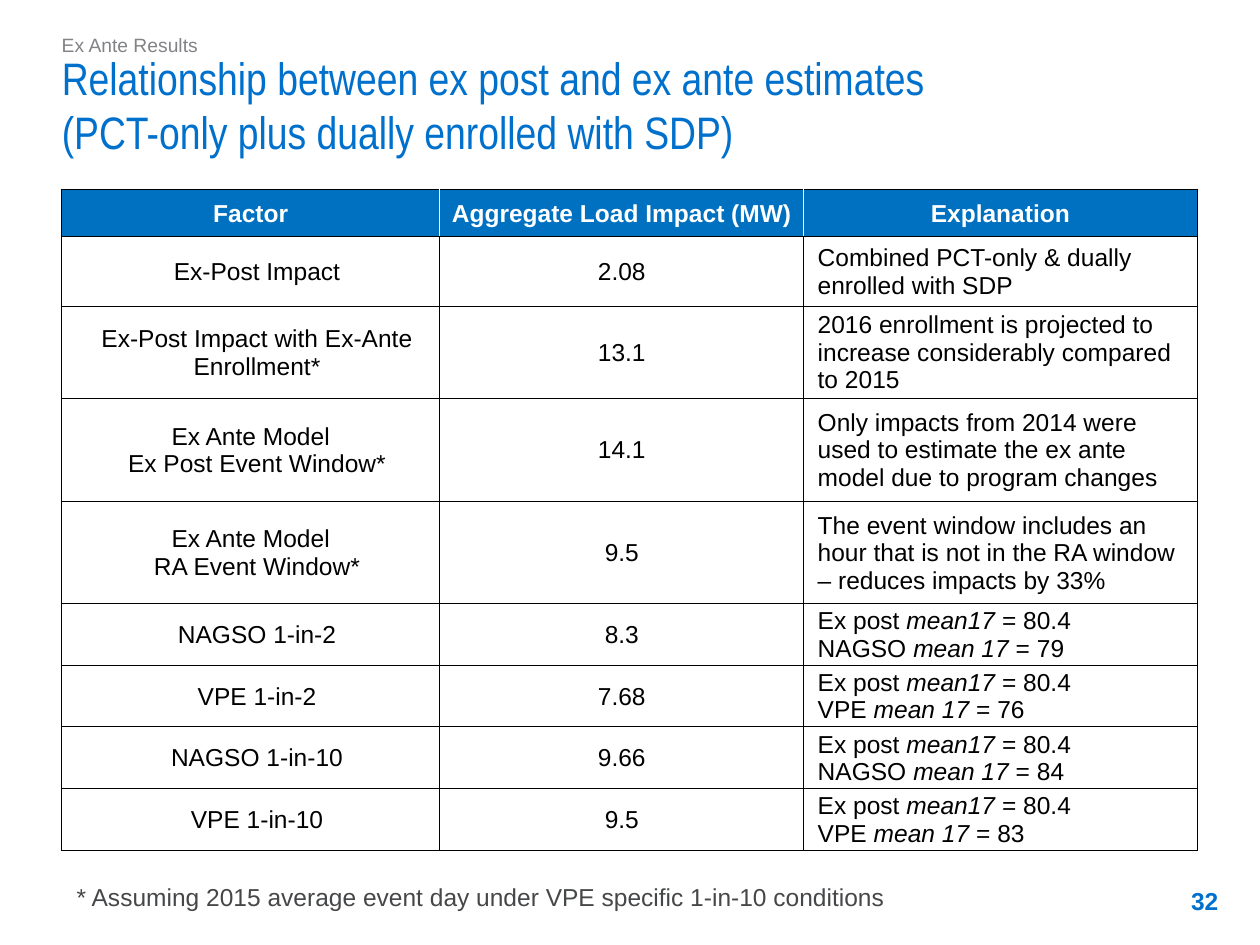
from lxml import etree
from pptx import Presentation
from pptx.dml.color import RGBColor
from pptx.enum.text import MSO_ANCHOR, PP_ALIGN
from pptx.oxml.ns import qn
from pptx.util import Inches, Pt

LEFT, MID, RIGHT = PP_ALIGN.LEFT, PP_ALIGN.CENTER, PP_ALIGN.RIGHT
TOP, CENTER, BASE = MSO_ANCHOR.TOP, MSO_ANCHOR.MIDDLE, MSO_ANCHOR.BOTTOM
WIDE, HIGH = 10, 7.5
EDGE = 0.49
INKS = {"title": "0070CD", "head": "0070C0", "note": "464749",
        "label": "818386", "text": "000000", "white": "FFFFFF"}
COLS = [3, 2.89, 3.12]
ROWS = [0.38, 0.55, 0.73, 0.82, 0.81] + [0.49] * 4
HEADS = ["Factor", "Aggregate Load Impact (MW)", "Explanation"]
STEPS = [
    ("Ex-Post Impact", "2.08", "Combined PCT-only & dually enrolled with SDP"),
    ("Ex-Post Impact with Ex-Ante Enrollment*", "13.1",
     "2016 enrollment is projected to increase considerably compared to 2015"),
    ("Ex Ante Model\nEx Post Event Window*", "14.1",
     "Only impacts from 2014 were used to estimate the ex ante model "
     "due to program changes"),
    ("Ex Ante Model\nRA Event Window*", "9.5",
     "The event window includes an hour that is not in the RA window – "
     "reduces impacts by 33%"),
]
CASES = [("NAGSO", 2, "8.3", 79), ("VPE", 2, "7.68", 76),
         ("NAGSO", 10, "9.66", 84), ("VPE", 10, "9.5", 83)]


def style(run, size, ink, bold=False, face="Arial"):
    font = run.font
    font.size, font.bold, font.name = Pt(size), bold, face
    font.color.rgb = RGBColor.from_string(INKS[ink])


def add_text(slide, box, text, size, ink, pads, anchor=TOP, align=LEFT,
             bold=False, face="Arial"):
    frame = slide.shapes.add_textbox(*map(Inches, box)).text_frame
    frame.word_wrap = True
    frame.vertical_anchor = anchor
    (frame.margin_left, frame.margin_top,
     frame.margin_right, frame.margin_bottom) = map(Inches, pads)
    frame.text = text
    para = frame.paragraphs[0]
    para.alignment = align
    for run in para.runs:
        style(run, size, ink, bold, face)
    return para


def add_edge(cell, side, ink):
    line = etree.SubElement(cell._tc.get_or_add_tcPr(), qn("a:ln" + side),
                            w=str(Pt(0.5)))
    fill = etree.SubElement(line, qn("a:solidFill"))
    etree.SubElement(fill, qn("a:srgbClr"), val=INKS[ink])


def fill_para(para, text, ink, bold, align, dent):
    para.alignment = align
    if dent:
        props = para._p.get_or_add_pPr()
        props.set("marL", str(Inches(0.1)))
        props.set("indent", "0")
    for i, part in enumerate(text.split("_")):
        run = para.add_run()
        run.text = part
        style(run, 14, ink, bold)
        run.font.italic = i % 2 == 1


def fill_cell(cell, text, head, col):
    cell.vertical_anchor = CENTER
    cell.margin_left = cell.margin_right = cell.margin_top = Inches(0.01)
    cell.margin_bottom = 0
    inner = "white" if head else "text"
    add_edge(cell, "L", inner if col else "text")
    add_edge(cell, "R", inner if col < len(COLS) - 1 else "text")
    add_edge(cell, "T", "text")
    add_edge(cell, "B", "text")
    if head:
        cell.fill.solid()
        cell.fill.fore_color.rgb = RGBColor.from_string(INKS["head"])
    else:
        cell.fill.background()
    frame = cell.text_frame
    for i, line in enumerate(text.split("\n")):
        para = frame.add_paragraph() if i else frame.paragraphs[0]
        dent = not head and col != 1 and line != "Ex Ante Model"
        align = LEFT if col == 2 and not head else MID
        fill_para(para, line, inner, head, align, dent)


def add_grid(slide, rows):
    box = (EDGE, HIGH * 0.2, sum(COLS), sum(ROWS))
    grid = slide.shapes.add_table(len(rows), len(COLS),
                                  *map(Inches, box)).table
    for col, width in zip(grid.columns, COLS):
        col.width = Inches(width)
    for row, height in zip(grid.rows, ROWS):
        row.height = Inches(height)
    for r, texts in enumerate(rows):
        for c, text in enumerate(texts):
            fill_cell(grid.cell(r, c), text, r == 0, c)


def main():
    deck = Presentation()
    deck.slide_width, deck.slide_height = Inches(WIDE), Inches(HIGH)
    slide = deck.slides.add_slide(deck.slide_layouts[6])
    flush, foot = (0, 0.05, 0.1, 0.05), HIGH - 0.55
    add_text(slide, (EDGE, 0.57, sum(COLS), 0.74),
             "Relationship between ex post and ex ante estimates\v"
             "(PCT-only plus dually enrolled with SDP)",
             26, "title", flush, BASE, face="Arial Narrow")
    label = add_text(slide, (EDGE, 0.18, WIDE * 0.77, 0.28),
                     "Ex Ante Results", 11, "label", flush)
    label.line_spacing = 1.2
    label.space_after = Pt(2.6)
    cases = [(f"{zone} 1-in-{odds}", load,
              f"Ex post _mean17_ = 80.4\n{zone} _mean 17 _= {heat}")
             for zone, odds, load, heat in CASES]
    add_grid(slide, [HEADS] + STEPS + cases)
    add_text(slide, (0.51, foot, 7.73, 0.4),
             "* Assuming 2015 average event day under VPE specific "
             "1-in-10 conditions", 14, "note", (0.1, 0.05, 0.1, 0.05))
    add_text(slide, (9.06, foot, 0.7, 0.4), "32", 14, "title",
             (0.09, 0.04, 0.09, 0.04), CENTER, RIGHT, True)
    deck.save("out.pptx")


if __name__ == "__main__":
    main()
